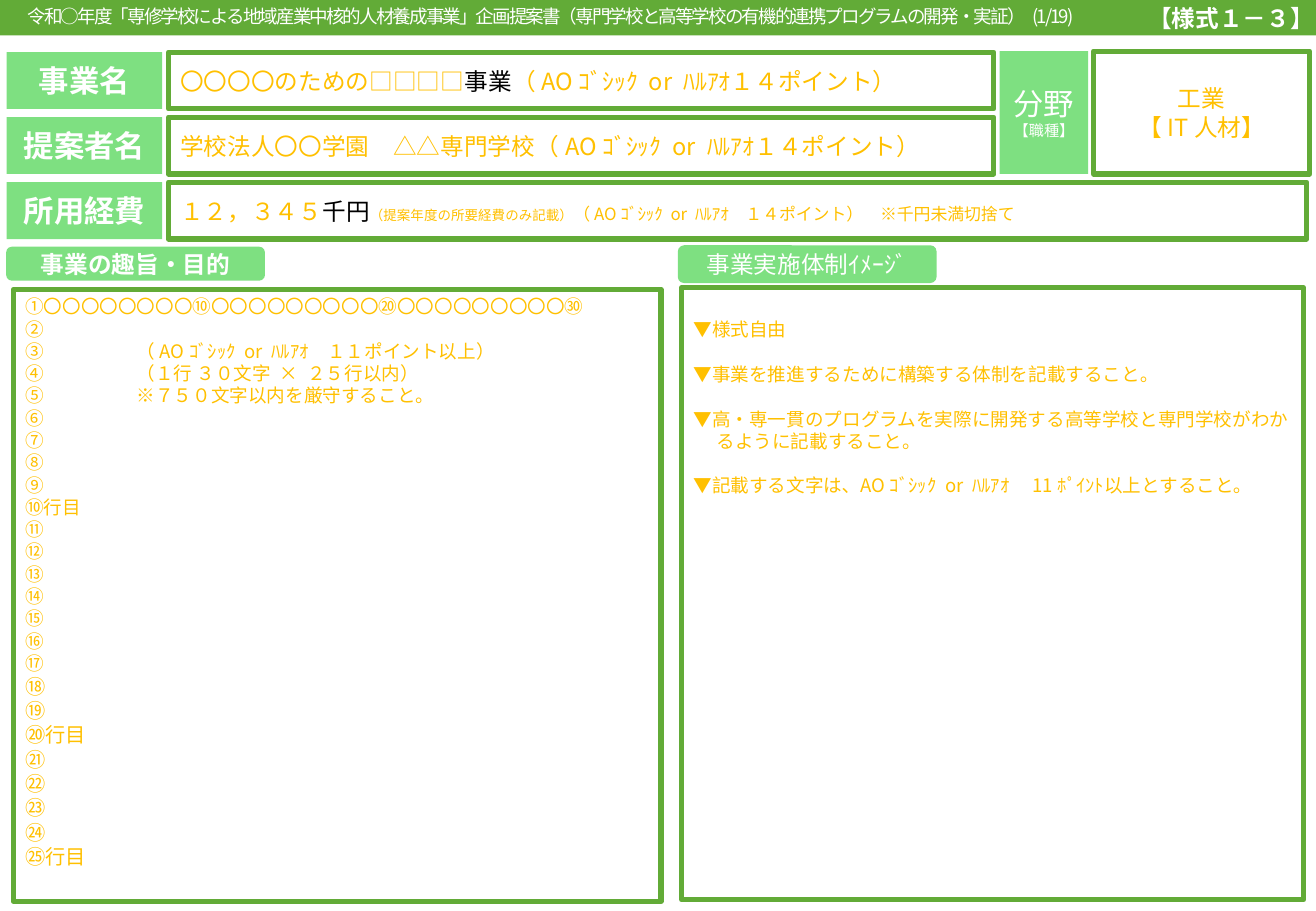
from lxml import etree
from pptx import Presentation, util as u
from pptx.dml.color import RGBColor
from pptx.enum import shapes, text
from pptx.oxml import ns

GREEN, LIGHT, ORANGE, WHITE, BLACK = "62AB37", "7EE081", "FFC000", "FFFFFF", "000000"
GOTHIC, HEADING = "Noto Sans CJK JP", "Karla"
FONT_NOTE = "AOｺﾞｼｯｸ or ﾊﾙｱｵ"
CENTER = text.PP_ALIGN.CENTER
MIDDLE, TOP = text.MSO_ANCHOR.MIDDLE, text.MSO_ANCHOR.TOP
LABEL_LEFT, LABEL_WIDTH, FIELD_LEFT = 0.14, 3.25, 3.52
ROW_TOP, ROW_STEP, ROW_HEIGHT = 1.09, 1.36, 1.19


def color(value):
    return RGBColor.from_string(value)


def write(frame, words, size=11, ink=ORANGE, font=GOTHIC, bold=False, align=None,
          join=False, before=0, hanging=0, tab=0, tracking=0):
    paragraph = frame.paragraphs[-1]
    if not join:
        if paragraph.runs:
            paragraph = frame.add_paragraph()
        paragraph.alignment = align
        paragraph.line_spacing = u.Pt(size * 1.2)
        paragraph.space_before = u.Pt(before)
        properties = paragraph._p.get_or_add_pPr()
        if hanging:
            properties.set("marL", str(u.Cm(hanging)))
            properties.set("indent", str(-u.Cm(hanging)))
        if tab:
            stops = etree.SubElement(properties, ns.qn("a:tabLst"))
            etree.SubElement(stops, ns.qn("a:tab"), pos=str(u.Cm(tab)), algn="l")
    run = paragraph.add_run()
    run.text = words
    run.font.size = u.Pt(size)
    run.font.bold = bold
    run.font.name = font
    run.font.color.rgb = color(ink)
    run_properties = run._r.get_or_add_rPr()
    etree.SubElement(run_properties, ns.qn("a:ea"), typeface=GOTHIC)
    if tracking:
        run_properties.set("spc", str(tracking))


def add_box(slide, left, top, width, height, fill=None, line=None,
            kind=shapes.MSO_SHAPE.RECTANGLE, anchor=MIDDLE):
    shape = slide.shapes.add_shape(kind, u.Cm(left), u.Cm(top), u.Cm(width), u.Cm(height))
    shape.shadow.inherit = False
    if fill:
        shape.fill.solid()
        shape.fill.fore_color.rgb = color(fill)
    else:
        shape.fill.background()
    if line:
        shape.line.color.rgb = color(line)
        shape.line.width = u.Pt(3)
    else:
        shape.line.fill.background()
    frame = shape.text_frame
    frame.word_wrap = True
    frame.vertical_anchor = anchor
    return frame


def add_caption(slide, left, top, width, height, words, **style):
    box = slide.shapes.add_textbox(u.Cm(left), u.Cm(top), u.Cm(width), u.Cm(height))
    box.text_frame.word_wrap = False
    write(box.text_frame, words, ink=WHITE, align=CENTER, **style)


def add_header(slide, left, top, width, height):
    add_box(slide, left, top, width, height, fill=GREEN)
    add_caption(slide, left - 0.15, top - 0.03, 23.32, height,
                "令和○年度「専修学校による地域産業中核的人材養成事業」企画提案書"
                "（専門学校と高等学校の有機的連携プログラムの開発・実証） (1/19)",
                size=11, tracking=-120)
    add_caption(slide, left + 23.5, top - 0.05, 4.47, height + 0.12, "【様式１－３】",
                size=14, font=HEADING, bold=True)


def add_row(slide, top, field_width, label, parts):
    frame = add_box(slide, LABEL_LEFT, top, LABEL_WIDTH, ROW_HEIGHT, fill=LIGHT)
    write(frame, label, size=18, ink=WHITE, font=HEADING, bold=True, align=CENTER)
    field = add_box(slide, FIELD_LEFT, top, field_width, ROW_HEIGHT, line=GREEN)
    for index, (words, size, ink) in enumerate(parts):
        write(field, words, size=size, ink=ink, join=index > 0)


def add_field_of_study(slide, left, top, width, height):
    label_width, gap = 1.85, 0.11
    label = add_box(slide, left, top, label_width, height, fill=LIGHT)
    write(label, "分野", size=18, ink=WHITE, align=CENTER)
    write(label, "【職種】", size=9, ink=WHITE, align=CENTER)
    offset = label_width + gap
    field = add_box(slide, left + offset, top, width - offset, height, line=GREEN)
    for words in ("工業", "【IT人材】"):
        write(field, words, size=14, align=CENTER)


def add_section(slide, left, top, width, height, title, tab_left, tab_height, bold, font):
    tab = add_box(slide, left + tab_left, top, 5.41, tab_height, fill=LIGHT,
                  kind=shapes.MSO_SHAPE.ROUNDED_RECTANGLE)
    write(tab, title, size=14, ink=WHITE, font=font, bold=bold, align=CENTER)
    return add_box(slide, left, top + 0.89, width, height - 0.89, line=GREEN, anchor=TOP)


def add_purpose(slide, left, top, width, height):
    body = add_section(slide, left, top, width, height, "事業の趣旨・目的",
                       -0.15, 0.71, True, HEADING)
    notes = {
        1: "〇〇〇〇〇〇〇〇⑩〇〇〇〇〇〇〇〇〇⑳〇〇〇〇〇〇〇〇〇㉚",
        3: f"\t（{FONT_NOTE}　１１ポイント以上）",
        4: "\t（１行 ３０文字 × ２５行以内）",
        5: "\t※７５０文字以内を厳守すること。",
        10: "行目", 20: "行目", 25: "行目",
    }
    numerals = "①②③④⑤⑥⑦⑧⑨⑩⑪⑫⑬⑭⑮⑯⑰⑱⑲⑳㉑㉒㉓㉔㉕"
    for number, numeral in enumerate(numerals, start=1):
        note = notes.get(number, "")
        write(body, numeral + note, size=11 if number < 18 else 12,
              tab=2.33 if note.startswith("\t") else 0)


def add_structure(slide, left, top, width, height):
    body = add_section(slide, left, top, width, height, "事業実施体制ｲﾒｰｼﾞ",
                       -0.08, 0.79, False, GOTHIC)
    body.margin_top = u.Cm(0.64)
    remarks = (
        "▼様式自由",
        "▼事業を推進するために構築する体制を記載すること｡",
        "▼高・専一貫のプログラムを実際に開発する高等学校と専門学校がわかるように記載すること。",
        f"▼記載する文字は､ {FONT_NOTE}　11ﾎﾟｲﾝﾄ以上とすること｡",
    )
    for index, remark in enumerate(remarks):
        write(body, remark, hanging=0.48, before=13.2 if index else 0)


def main():
    presentation = Presentation()
    presentation.slide_width, presentation.slide_height = u.Cm(27.51), u.Cm(19.05)
    slide = presentation.slides.add_slide(presentation.slide_layouts[6])
    rows = (
        (17.26, "事業名", (("〇〇〇〇のための□□□□", 14, ORANGE), ("事業", 14, BLACK),
                        (f"（{FONT_NOTE}１４ポイント）", 14, ORANGE))),
        (17.26, "提案者名",
         ((f"学校法人〇〇学園　△△専門学校（{FONT_NOTE}１４ポイント）", 14, ORANGE),)),
        (23.8, "所用経費", (("１２，３４５", 14, ORANGE), ("千円", 14, BLACK),
                        ("（提案年度の所要経費のみ記載）", 8, ORANGE),
                        (f"（{FONT_NOTE}　１４ポイント）　※千円未満切捨て", 10, ORANGE))),
    )
    for index, row in enumerate(rows):
        add_row(slide, ROW_TOP + index * ROW_STEP, *row)
    add_field_of_study(slide, 20.9, 1.07, 6.48, 2.57)
    add_purpose(slide, 0.28, 5.16, 13.54, 13.69)
    add_structure(slide, 14.25, 5.13, 13, 13.69)
    add_header(slide, 0, 0, 27.51, 0.74)
    presentation.save("out.pptx")


if __name__ == "__main__":
    main()
